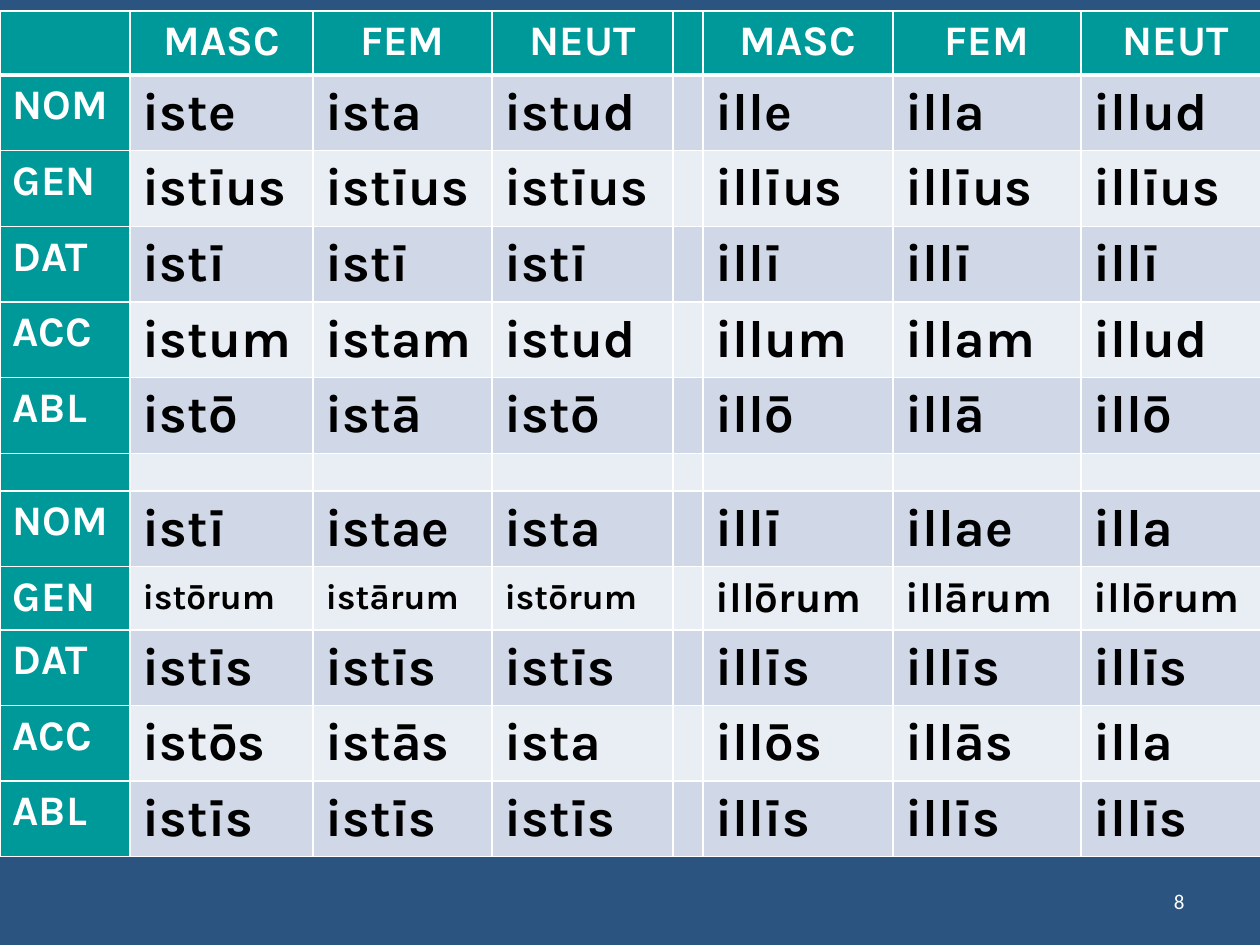
import lxml.etree
import pptx
import pptx.dml.color
import pptx.enum.text
import pptx.oxml.ns
import pptx.util

RGBColor = pptx.dml.color.RGBColor
PP_ALIGN = pptx.enum.text.PP_ALIGN
MSO_ANCHOR = pptx.enum.text.MSO_ANCHOR
qn = pptx.oxml.ns.qn

NAVY = RGBColor(0x2B, 0x54, 0x81)
TEAL = RGBColor(0x00, 0x99, 0x99)
BAND_DARK = RGBColor(0xD0, 0xD8, 0xE8)
BAND_LIGHT = RGBColor(0xE9, 0xED, 0xF4)
WHITE = RGBColor(0xFF, 0xFF, 0xFF)
BLACK = RGBColor(0x00, 0x00, 0x00)

PX_PER_INCH = 126
COLUMN_WIDTHS = [130, 183, 179, 181, 30, 190, 188, 189]
ROW_HEIGHT, GAP_HEIGHT, SMALL_HEIGHT = 64, 34, 60
GAP_ROW, SMALL_ROW = 6, 8
SPACER_SIZE = 12

DECLENSION = [
    ["", "MASC", "FEM", "NEUT", "", "MASC", "FEM", "NEUT"],
    ["NOM", "iste", "ista", "istud", "", "ille", "illa", "illud"],
    ["GEN", "istīus", "istīus", "istīus", "", "illīus", "illīus", "illīus"],
    ["DAT", "istī", "istī", "istī", "", "illī", "illī", "illī"],
    ["ACC", "istum", "istam", "istud", "", "illum", "illam", "illud"],
    ["ABL", "istō", "istā", "istō", "", "illō", "illā", "illō"],
    [""] * 8,
    ["NOM", "istī", "istae", "ista", "", "illī", "illae", "illa"],
    ["GEN", "istōrum", "istārum", "istōrum", "", "illōrum", "illārum", "illōrum"],
    ["DAT", "istīs", "istīs", "istīs", "", "illīs", "illīs", "illīs"],
    ["ACC", "istōs", "istās", "ista", "", "illōs", "illās", "illa"],
    ["ABL", "istīs", "istīs", "istīs", "", "illīs", "illīs", "illīs"],
]


def px(length):
    """Turn a length in px into EMU."""
    return pptx.util.Emu(round(length * 914400 / PX_PER_INCH))


def write(frame, text, *, size, color, font="Karla", bold=False, align=PP_ALIGN.LEFT):
    """Write one formatted line of text into a text frame."""
    line = frame.paragraphs[0]
    line.alignment = align
    if not text:
        lxml.etree.SubElement(line._p, qn("a:endParaRPr"), sz=str(size * 100))
        return
    run = line.add_run()
    run.text = text
    run.font.name = font
    run.font.size = pptx.util.Pt(size)
    run.font.bold = bold
    run.font.color.rgb = color


def draw_borders(cell, **widths):
    """Give a cell white borders, with widths in points by side."""
    properties = cell._tc.get_or_add_tcPr()
    for position, side in enumerate("LRTB"):
        border = lxml.etree.Element(qn(f"a:ln{side}"), w=str(pptx.util.Pt(widths.get(side, 1))))
        fill = lxml.etree.SubElement(border, qn("a:solidFill"))
        lxml.etree.SubElement(fill, qn("a:srgbClr"), val=str(WHITE))
        properties.insert(position, border)


def format_cell(cell, row, column, text):
    """Fill, border and write one cell by its place in the declension."""
    heading = row == 0 or column == 0
    band = BAND_DARK if row % 2 else BAND_LIGHT
    cell.fill.solid()
    cell.fill.fore_color.rgb = TEAL if heading else band
    draw_borders(cell, T=3 if row == 1 else 1, B=3 if row == 0 else 1)
    if not text:
        size = SPACER_SIZE
    elif heading:
        size = 24
    elif row == SMALL_ROW:
        size = 20 if column < 4 else 24
    else:
        size = 30
    if not heading:
        cell.vertical_anchor = MSO_ANCHOR.MIDDLE
    write(cell.text_frame, text, size=size, bold=True,
          color=WHITE if heading else BLACK,
          align=PP_ALIGN.CENTER if row == 0 else PP_ALIGN.LEFT)


def add_declension(slide, left, top, width, height):
    """Add the table of pronoun forms."""
    frame = slide.shapes.add_table(len(DECLENSION), len(COLUMN_WIDTHS),
                                   px(left), px(top), px(width), px(height))
    table = frame.table
    for column, column_width in zip(table.columns, COLUMN_WIDTHS):
        column.width = px(column_width)
    special_heights = {GAP_ROW: GAP_HEIGHT, SMALL_ROW: SMALL_HEIGHT}
    for row, forms in enumerate(DECLENSION):
        table.rows[row].height = px(special_heights.get(row, ROW_HEIGHT))
        for column, form in enumerate(forms):
            format_cell(table.cell(row, column), row, column, form)
    frame.height = px(height)


def add_page_number(slide, left, top, width, height):
    """Add the page number at the lower right."""
    page_number = slide.shapes.add_textbox(px(left), px(top), px(width), px(height))
    page_number.text_frame.word_wrap = True
    page_number.text_frame.vertical_anchor = MSO_ANCHOR.MIDDLE
    write(page_number.text_frame, "8", size=12, color=WHITE, font="Calibri",
          align=PP_ALIGN.RIGHT)


def main():
    """Build the slide and save it."""
    deck = pptx.Presentation()
    deck.slide_width, deck.slide_height = px(1260), px(945)
    slide = deck.slides.add_slide(deck.slide_layouts[6])
    slide.background.fill.solid()
    slide.background.fill.fore_color.rgb = NAVY
    add_page_number(slide, 903, 876, 294, 50)
    add_declension(slide, 0, 11, sum(COLUMN_WIDTHS), 845)
    deck.save("out.pptx")


if __name__ == "__main__":
    main()
